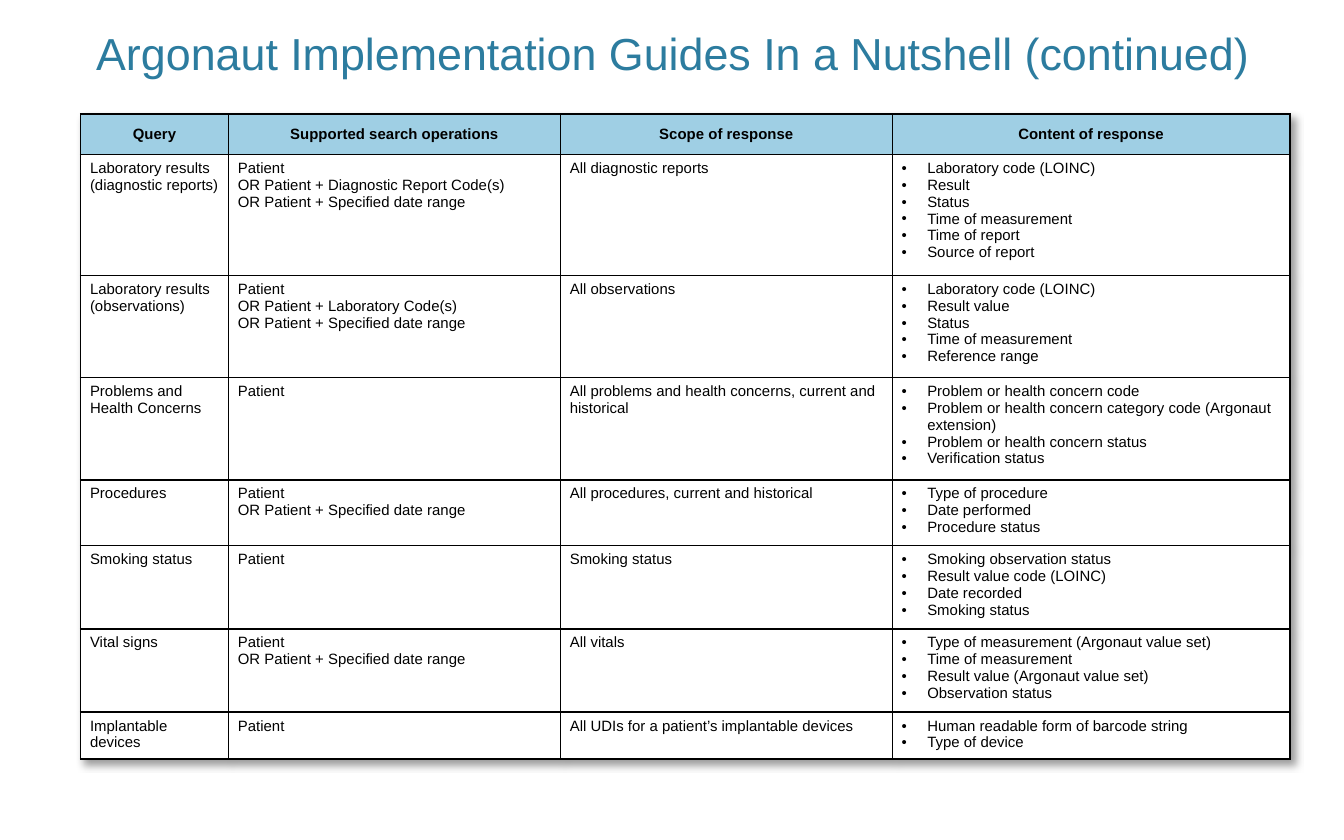
from lxml import etree
from pptx import Presentation
from pptx.dml.color import RGBColor
from pptx.enum.text import MSO_ANCHOR as Anchor, PP_ALIGN as Align
from pptx.oxml import parse_xml
from pptx.oxml.ns import nsdecls, qn
from pptx.util import Inches, Pt

TITLE = "Argonaut Implementation Guides In a Nutshell (continued)"
HEADERS = ["Query", "Supported search operations", "Scope of response", "Content of response"]
DATE_RANGE = "OR Patient + Specified date range"
# Query, search operations, scope, content
QUERIES = [
    ("Laboratory results (diagnostic reports)",
     ["Patient", "OR Patient + Diagnostic Report Code(s)", DATE_RANGE],
     "All diagnostic reports",
     ["Laboratory code (LOINC)", "Result", "Status", "Time of measurement",
      "Time of report", "Source of report"]),
    ("Laboratory results (observations)",
     ["Patient", "OR Patient + Laboratory Code(s)", DATE_RANGE],
     "All observations",
     ["Laboratory code (LOINC)", "Result value", "Status", "Time of measurement",
      "Reference range"]),
    ("Problems and Health Concerns",
     ["Patient"],
     "All problems and health concerns, current and historical",
     ["Problem or health concern code",
      "Problem or health concern category code (Argonaut extension)",
      "Problem or health concern status", "Verification status"]),
    ("Procedures",
     ["Patient", DATE_RANGE],
     "All procedures, current and historical",
     ["Type of procedure", "Date performed", "Procedure status"]),
    ("Smoking status",
     ["Patient"],
     "Smoking status",
     ["Smoking observation status", "Result value code (LOINC)", "Date recorded",
      "Smoking status"]),
    ("Vital signs",
     ["Patient", DATE_RANGE],
     "All vitals",
     ["Type of measurement (Argonaut value set)", "Time of measurement",
      "Result value (Argonaut value set)", "Observation status"]),
    ("Implantable devices",
     ["Patient"],
     "All UDIs for a patient’s implantable devices",
     ["Human readable form of barcode string", "Type of device"]),
]
COLUMN_WIDTHS = [1.1, 2.47, 2.47, 2.96]
ROW_HEIGHTS = [0.3, 0.9, 0.76, 0.76, 0.49, 0.62, 0.62, 0.35]
FONT = "Arial"
BLACK, WHITE, PALE_BLUE, TITLE_BLUE = "000000", "FFFFFF", "9FCFE4", "2C7C9F"


def color(value):
    return RGBColor.from_string(value)


def format_text(para, size, text_color, bold=False):
    for span in para.runs:
        span.font.name = FONT
        span.font.size = Pt(size)
        span.font.bold = bold
        span.font.color.rgb = color(text_color)


def add_bullet(para):
    properties = para._p.get_or_add_pPr()
    properties.set("marL", str(Inches(0.19)))
    properties.set("indent", str(-Inches(0.19)))
    etree.SubElement(properties, qn("a:buFont"), typeface=FONT)
    etree.SubElement(properties, qn("a:buChar"), char="•")


def add_borders(cell):
    """Put the four side lines ahead of the cell's fill, as the schema asks."""
    properties = cell._tc.get_or_add_tcPr()
    for place, side in enumerate(("lnL", "lnR", "lnT", "lnB")):
        properties.insert(place, parse_xml(
            f'<a:{side} {nsdecls("a")} w="{Pt(1)}"><a:solidFill>'
            f'<a:srgbClr val="{BLACK}"/></a:solidFill></a:{side}>'))


def fill_cell(cell, lines, is_header, bulleted):
    cell.margin_left = cell.margin_right = Inches(0.07)
    cell.margin_top = cell.margin_bottom = Inches(0.04)
    cell.vertical_anchor = Anchor.MIDDLE if is_header else Anchor.TOP
    cell.fill.solid()
    cell.fill.fore_color.rgb = color(PALE_BLUE if is_header else WHITE)
    add_borders(cell)
    cell.text_frame.text = "\n".join(lines)
    for para in cell.text_frame.paragraphs:
        para.alignment = Align.CENTER if is_header else Align.LEFT
        format_text(para, 8, BLACK, bold=is_header)
        if bulleted:
            add_bullet(para)


def add_table_shadow(table):
    table._tbl.tblPr.insert(0, parse_xml(
        f'<a:effectLst {nsdecls("a")}><a:outerShdw blurRad="{Pt(4)}" dist="{Pt(3)}" '
        f'dir="2700000" algn="tl" rotWithShape="0"><a:srgbClr val="{BLACK}">'
        '<a:alpha val="40000"/></a:srgbClr></a:outerShdw></a:effectLst>'))


def add_title(page):
    title = page.shapes.title
    title.left, title.top = Inches(0.32), Inches(0.28)
    title.width, title.height = Inches(9.37), Inches(0.36)
    title.text_frame.text = TITLE
    title.text_frame.vertical_anchor = Anchor.BOTTOM
    para = title.text_frame.paragraphs[0]
    para.alignment = Align.CENTER
    format_text(para, 24, TITLE_BLUE)


def add_query_table(page):
    rows = [HEADERS, *QUERIES]
    table = page.shapes.add_table(
        len(rows), len(HEADERS), Inches(0.6), Inches(0.85),
        Inches(sum(COLUMN_WIDTHS)), Inches(sum(ROW_HEIGHTS))).table
    table.horz_banding = False
    add_table_shadow(table)
    for column, width in zip(table.columns, COLUMN_WIDTHS):
        column.width = Inches(width)
    for row, height in zip(table.rows, ROW_HEIGHTS):
        row.height = Inches(height)
    for r, row in enumerate(rows):
        for c, content in enumerate(row):
            lines = [content] if isinstance(content, str) else content
            is_header = r == 0
            bulleted = not is_header and c == len(HEADERS) - 1
            fill_cell(table.cell(r, c), lines, is_header, bulleted)


def main():
    deck = Presentation()
    deck.slide_width, deck.slide_height = Inches(10), Inches(6.25)
    page = deck.slides.add_slide(deck.slide_layouts[5])
    add_query_table(page)
    add_title(page)
    deck.save("out.pptx")


if __name__ == "__main__":
    main()
